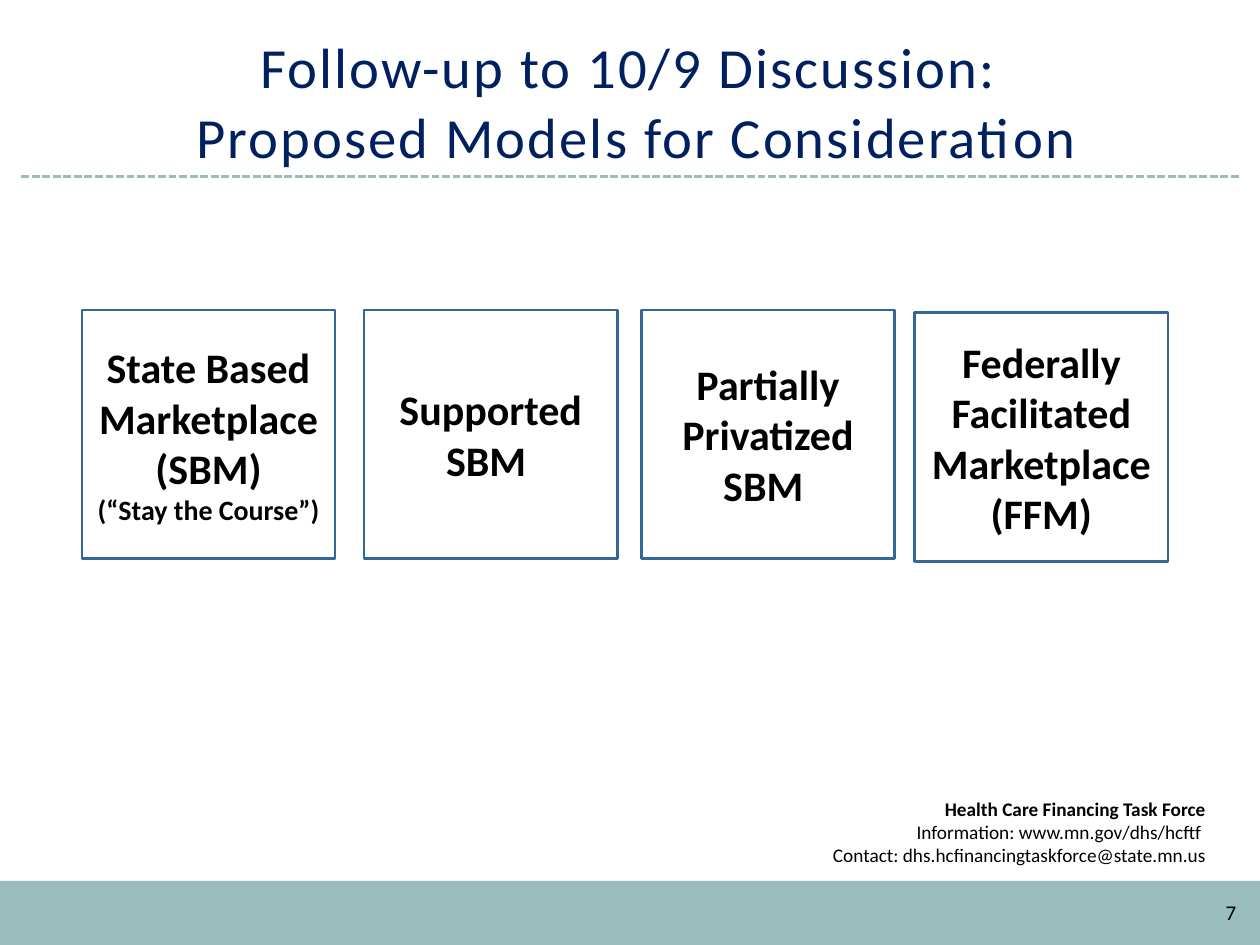
"""Build the slide of four proposed marketplace models."""
from lxml import etree
from pptx import Presentation, util as u
from pptx.dml.color import RGBColor
from pptx.enum import dml, shapes, text
from pptx.oxml.ns import qn

deck = Presentation()
deck.slide_width, deck.slide_height = u.Inches(10), u.Inches(7.5)
W, H = deck.slide_width, deck.slide_height
page = deck.slides.add_slide(deck.slide_layouts[6])
RECT = shapes.MSO_SHAPE.RECTANGLE
ALIGN, ANCHOR = text.PP_ALIGN, text.MSO_ANCHOR
TEAL = "9ABCBB"


def paint(part, tone):
    if hasattr(part, "solid"):
        part.solid()
        part = part.fore_color
    else:
        part = part.color
    part.rgb = RGBColor.from_string(tone)


def write(shape, lines, sizes, align, anchor, tone="000000", bold=False):
    frame = shape.text_frame
    frame.word_wrap = True
    frame.vertical_anchor = anchor
    frame.text = "\n".join(lines)
    for para, size in zip(frame.paragraphs, sizes):
        para.alignment = align
        para.font.name, para.font.size, para.font.bold = "Calibri", u.Pt(size), bold
        paint(para.font, tone)
    return frame.paragraphs


band = page.shapes.add_shape(RECT, 0, int(H * 0.932), W, int(H * 0.068))
band.shadow.inherit = False
paint(band.fill, TEAL)
band.line.fill.background()

edge, level = int(W * 0.017), int(H * 0.1867)
rule = page.shapes.add_connector(shapes.MSO_CONNECTOR.STRAIGHT, edge, level, W - edge, level)
paint(rule.line, TEAL)
rule.line.width = u.Pt(1.5)
rule.line.dash_style = dml.MSO_LINE.SQUARE_DOT
etree.SubElement(rule._element.spPr, qn("a:effectLst"))

info = page.shapes.add_shape(RECT, int(W * 0.454), int(H * 0.835), int(W * 0.513), int(H * 0.09))
info.shadow.inherit = False
paint(info.fill, "FFFFFF")
info.line.fill.background()
notes = ["Health Care Financing Task Force\vInformation: www.mn.gov/dhs/hcftf ",
         "Contact: dhs.hcfinancingtaskforce@state.mn.us"]
paras = write(info, notes, [11, 11], ALIGN.RIGHT, ANCHOR.MIDDLE)
paras[0].runs[0].font.bold = True

title = page.shapes.add_textbox(int(W * 0.033), int(H * 0.033), int(W * 0.933), int(H * 0.153))
head = ["Follow-up to 10/9 Discussion:\v Proposed Models for Consideration"]
para = write(title, head, [32.4], ALIGN.CENTER, ANCHOR.BOTTOM, "002060")[0]
para.line_spacing = u.Pt(40)
para.font._element.set("spc", "120") if hasattr(para.font, "_element") else para.font._rPr.set("spc", "120")

models = [
    (0.065, 0.328, ["State Based Marketplace (SBM)", "(“Stay the Course”)"]),
    (0.289, 0.328, ["Supported SBM "]),
    (0.509, 0.328, ["Partially Privatized SBM "]),
    (0.726, 0.331, ["Federally Facilitated Marketplace (FFM)"]),
]
for left, top, lines in models:
    box = page.shapes.add_shape(RECT, int(W * left), int(H * top), int(W * 0.201), int(H * 0.263))
    box.shadow.inherit = False
    paint(box.fill, "FFFFFF")
    clear = box._element.spPr.find(qn("a:solidFill"))[0]
    etree.SubElement(clear, qn("a:alpha"), val="30000")
    paint(box.line, "336699")
    box.line.width = u.Pt(1.5)
    write(box, lines, [24, 16], ALIGN.CENTER, ANCHOR.MIDDLE, bold=True)

number = page.shapes.add_textbox(int(W * 0.933), int(H * 0.939), int(W * 0.058), int(H * 0.053))
write(number, ["7"], [12], ALIGN.RIGHT, ANCHOR.MIDDLE)

deck.save("out.pptx")
